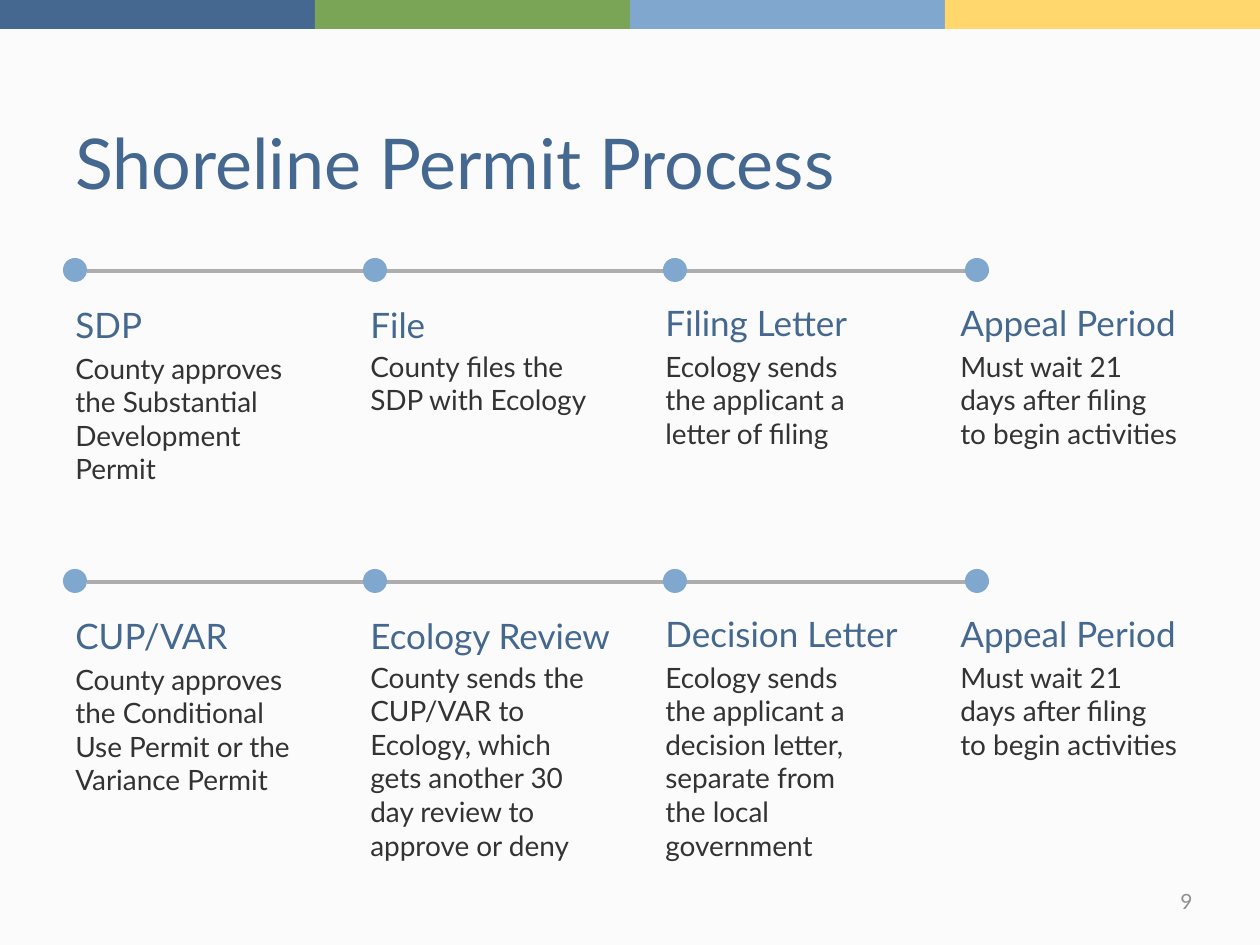
from lxml.etree import SubElement
from pptx import Presentation
from pptx.dml.color import RGBColor
from pptx.enum.shapes import MSO_CONNECTOR, MSO_SHAPE
from pptx.enum.text import MSO_ANCHOR, MSO_AUTO_SIZE, PP_ALIGN
from pptx.oxml.ns import qn
from pptx.util import Pt

PX = 914400 / 126
NAVY, GREEN, BLUE, YELLOW = "44688F", "7AA456", "80A8CE", "FFD76D"
PAPER, INK, LINE_GRAY, NUMBER_GRAY = "FBFBFB", "333333", "ADADAD", "909090"

deck = Presentation()
deck.slide_width, deck.slide_height = round(1260 * PX), round(945 * PX)
page = deck.slides.add_slide(deck.slide_layouts[6])
page.background.fill.solid()
page.background.fill.fore_color.rgb = RGBColor.from_string(PAPER)


def add_solid(kind, left, top, width, height, color):
    shape = page.shapes.add_shape(kind, *(round(n * PX) for n in (left, top, width, height)))
    shape.shadow.inherit = False
    shape.fill.solid()
    shape.fill.fore_color.rgb = RGBColor.from_string(color)
    shape.line.fill.background()


def add_text(text, left, top, width, height, size, color, grow=True):
    box = page.shapes.add_textbox(*(round(n * PX) for n in (left, top, width, height)))
    frame = box.text_frame
    frame.word_wrap = True
    frame.auto_size = MSO_AUTO_SIZE.SHAPE_TO_FIT_TEXT if grow else MSO_AUTO_SIZE.NONE
    frame.text = text
    font = frame.paragraphs[0].runs[0].font
    font.name, font.size = "Lato", Pt(size)
    font.color.rgb = RGBColor.from_string(color)
    return frame


for index, color in enumerate((NAVY, GREEN, BLUE, YELLOW)):
    add_solid(MSO_SHAPE.RECTANGLE, 315 * index, 0, 315, 29, color)

title = add_text("Shoreline Permit Process", 63, 50, 1142, 161, 40, NAVY, grow=False)
title.vertical_anchor = MSO_ANCHOR.BOTTOM
title.paragraphs[0].line_spacing = 0.9

number = add_text("9", 921, 876, 284, 50, 12, NUMBER_GRAY, grow=False)
number.vertical_anchor = MSO_ANCHOR.MIDDLE
number.paragraphs[0].alignment = PP_ALIGN.RIGHT

appeal = ("Appeal Period", 242, "Must wait 21 days after filing to begin activities", 3)
timelines = [
    [
        ("SDP", 242, "County approves the Substantial Development Permit", 4),
        ("File", 242, "County files the SDP with Ecology", 2),
        ("Filing Letter", 242, "Ecology sends the applicant a letter of filing", 3),
        appeal,
    ],
    [
        ("CUP/VAR", 242, "County approves the Conditional Use Permit or the Variance Permit", 4),
        ("Ecology Review", 272, "County sends the CUP/VAR to Ecology, which gets another 30 day "
         "review to approve or deny", 6),
        ("Decision Letter", 265, "Ecology sends the applicant a decision letter, separate from "
         "the local government", 5),
        appeal,
    ],
]
dot_lefts = (63, 363, 663, 965)
heading_tops = (39, 39, 37, 37)
body_tops = (87, 85, 85, 85)

for row, steps in enumerate(timelines):
    top = 258 + 311 * row
    ends = (87, top + 13, 989, top + 13)
    line = page.shapes.add_connector(MSO_CONNECTOR.STRAIGHT, *(round(n * PX) for n in ends))
    line.line.color.rgb = RGBColor.from_string(LINE_GRAY)
    line.line.width = Pt(2.25)
    SubElement(line._element.spPr, qn("a:effectLst"))
    for column, (heading, heading_width, body, lines) in enumerate(steps):
        left = 63 + 295 * column
        add_solid(MSO_SHAPE.OVAL, dot_lefts[column], top, 24, 24, BLUE)
        add_text(heading, left, top + heading_tops[column], heading_width, 55, 20, NAVY)
        add_text(body, left, top + body_tops[column], 242, 13 + 34 * lines, 16, INK)

deck.save("out.pptx")
